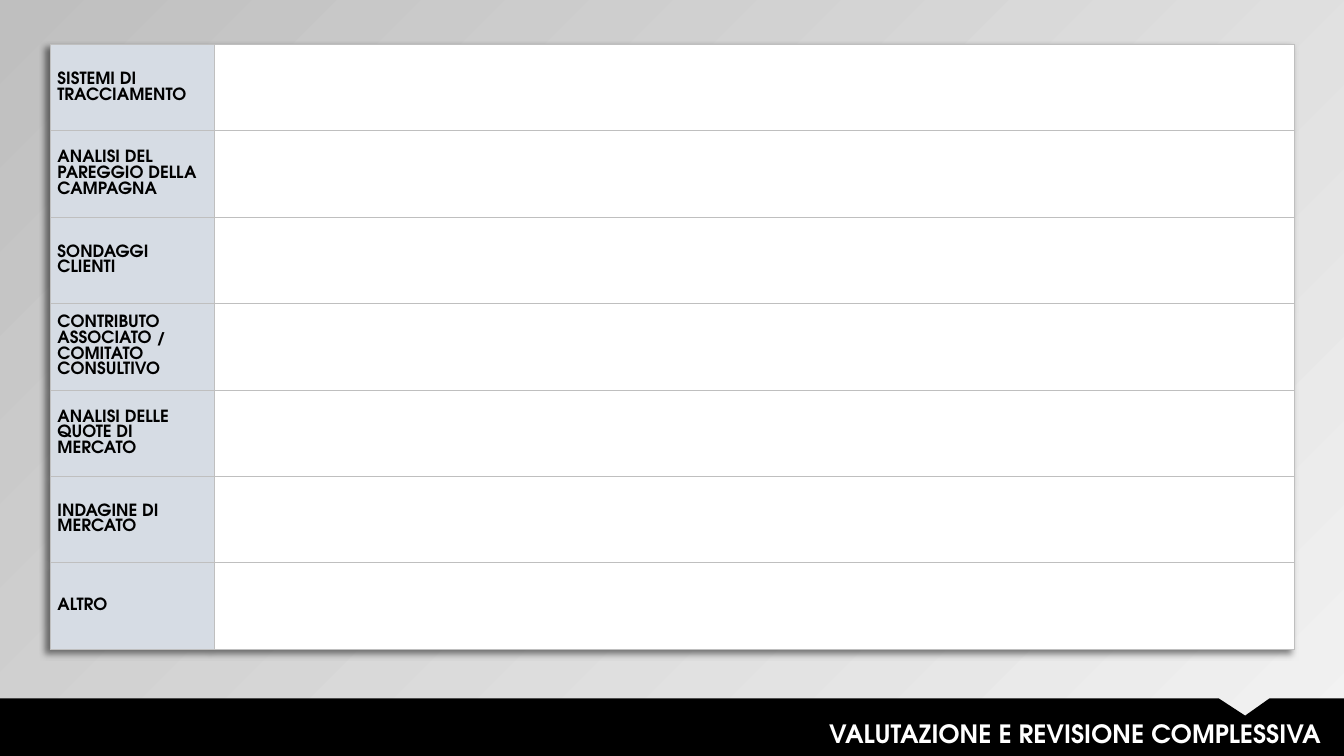
from lxml.etree import SubElement
from pptx import Presentation
from pptx.dml.color import RGBColor as Rgb
from pptx.enum.text import MSO_ANCHOR as Anchor, MSO_AUTO_SIZE as Fit, PP_ALIGN as Align
from pptx.oxml import parse_xml
from pptx.oxml.ns import nsdecls, qn
from pptx.util import Inches, Pt

COLORS = {
    "black": "000000",
    "white": "FFFFFF",
    "label": "D6DCE4",
    "rule": "BFBFBF",
    "light": "F2F2F2",
}
FONT = "TeX Gyre Adventor"
TOPICS = [
    "SISTEMI DI TRACCIAMENTO",
    "ANALISI DEL PAREGGIO DELLA CAMPAGNA",
    "SONDAGGI CLIENTI",
    "CONTRIBUTO \nASSOCIATO / COMITATO CONSULTIVO",
    "ANALISI DELLE QUOTE DI MERCATO",
    "INDAGINE DI MERCATO",
    "ALTRO",
]


def color(name):
    return Rgb.from_string(COLORS[name])


def write(frame, text, size=12, tint="black", bold=True, align=Align.LEFT):
    para = frame.paragraphs[0]
    para.text = text
    para.alignment = align
    for run in para.runs:
        run.font.name = FONT
        run.font.size = Pt(size)
        run.font.bold = bold
        run.font.color.rgb = color(tint)


class Page:
    def __init__(self, deck):
        self.slide = deck.slides.add_slide(deck.slide_layouts[6])
        self.shapes = self.slide.shapes

    def backdrop(self, start, end, angle):
        fill = self.slide.background.fill
        fill.gradient()
        fill.gradient_angle = angle
        for stop, name in zip(fill.gradient_stops, (start, end)):
            stop.color.rgb = color(name)

    def border(self, cell):
        props = cell._tc.get_or_add_tcPr()
        for side in ("lnL", "lnR", "lnT", "lnB"):
            line = SubElement(props, qn(f"a:{side}"), w=str(Pt(0.5)))
            fill = SubElement(line, qn("a:solidFill"))
            SubElement(fill, qn("a:srgbClr"), val=COLORS["rule"])

    def shadow(self, table):
        table._tbl.tblPr.insert(0, parse_xml(
            f'<a:effectLst {nsdecls("a")}>'
            '<a:outerShdw blurRad="63500" dist="50800" dir="8100000" algn="tr" rotWithShape="0">'
            f'<a:srgbClr val="{COLORS["black"]}"><a:alpha val="50000"/></a:srgbClr>'
            '</a:outerShdw></a:effectLst>'))

    def table(self, labels, left, top, widths, height):
        frame = self.shapes.add_table(
            len(labels), len(widths), Inches(left), Inches(top),
            Inches(sum(widths)), Inches(height))
        table = frame.table
        table.first_row = table.horz_banding = False
        self.shadow(table)
        for col, width in zip(table.columns, widths):
            col.width = Inches(width)
        for row, label in zip(table.rows, labels):
            row.height = Inches(height / len(labels))
            for cell, name in zip(row.cells, ("label", "white")):
                self.border(cell)
                cell.fill.solid()
                cell.fill.fore_color.rgb = color(name)
                cell.vertical_anchor = Anchor.MIDDLE
                cell.margin_left = cell.margin_right = Inches(0.07)
                cell.margin_top = cell.margin_bottom = 0
            write(row.cells[0].text_frame, label)

    def outline(self, points, tint):
        spots = [(Inches(x), Inches(y)) for x, y in points]
        path = self.shapes.build_freeform(*spots[0])
        path.add_line_segments(spots[1:], close=True)
        shape = path.convert_to_shape()
        shape.shadow.inherit = False
        shape.fill.solid()
        shape.fill.fore_color.rgb = color(tint)
        shape.line.fill.background()

    def text(self, text, left, top, width, height, **style):
        box = self.shapes.add_textbox(
            Inches(left), Inches(top), Inches(width), Inches(height))
        box.text_frame.word_wrap = True
        box.text_frame.auto_size = Fit.SHAPE_TO_FIT_TEXT
        write(box.text_frame, text, **style)


def main():
    deck = Presentation()
    deck.slide_width, deck.slide_height = Inches(13.33), Inches(7.5)
    page = Page(deck)
    page.backdrop("light", "rule", 135)
    page.table(TOPICS, 0.5, 0.44, (1.63, 10.71), 6)
    page.outline([(0, 6.93), (12.09, 6.93), (12.35, 7.1), (12.59, 6.93),
                  (13.33, 6.93), (13.33, 7.5), (0, 7.5)], "black")
    page.text("VALUTAZIONE E REVISIONE COMPLESSIVA", 4.14, 7.08, 9.06, 0.4,
              size=18, tint="white", align=Align.RIGHT)
    deck.save("out.pptx")


if __name__ == "__main__":
    main()
